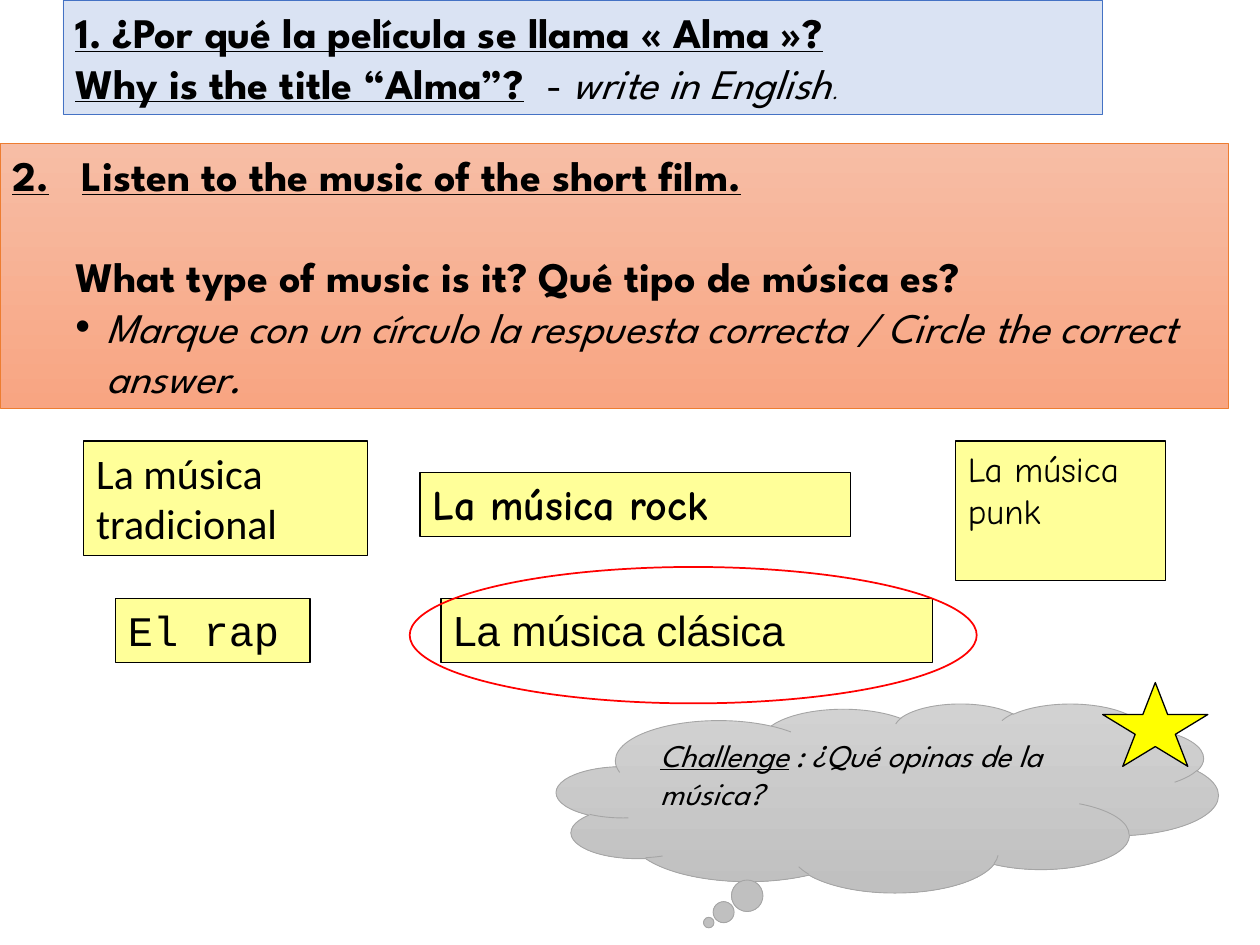
"""Build a Spanish lesson slide about the music of a short film."""
from dataclasses import dataclass

from lxml.etree import SubElement
from pptx import Presentation
from pptx.dml.color import RGBColor
from pptx.enum.shapes import MSO_SHAPE
from pptx.enum.text import MSO_ANCHOR
from pptx.oxml.ns import qn
from pptx.util import Cm, Pt


@dataclass(frozen=True)
class Theme:
    text: str = "000000"
    question: tuple = ("DAE3F3",)
    question_line: str = "4472C4"
    listening: tuple = ("F7BDA5", "F8A582")
    listening_line: str = "ED7D31"
    option: tuple = ("FFFF99",)
    cloud: tuple = ("D2D2D2", "C0C0C0")
    cloud_line: str = "A5A5A5"
    star: tuple = ("FFFF00",)
    answer_line: str = "FF0000"
    main_font: str = "League Spartan"
    large: int = 24
    medium: int = 20
    small: int = 18
    tiny: int = 12


THEME = Theme()


@dataclass(frozen=True)
class TextRun:
    text: str
    bold: bool = False
    italic: bool = False
    underline: bool = False
    size: int = THEME.large
    font: str = THEME.main_font


@dataclass(frozen=True)
class TextLine:
    runs: tuple
    margin: float = 0
    indent: float = 0
    bullet: str = ""
    space_before: float = 0


@dataclass(frozen=True)
class Panel:
    left: float
    top: float
    width: float
    height: float
    fill: tuple = ()
    line: str = THEME.text
    line_width: float = 0.75
    kind: MSO_SHAPE = MSO_SHAPE.RECTANGLE
    lines: tuple = ()
    anchor: MSO_ANCHOR = MSO_ANCHOR.TOP
    bottom_inset: float = 0.13
    adjustments: tuple = ()


def option(left: float, top: float, width: float, height: float, run: TextRun) -> Panel:
    return Panel(left, top, width, height, THEME.option, lines=(TextLine((run,)),))


PANELS = (
    Panel(
        1.27, 0, 20.96, 2.31, THEME.question, THEME.question_line, 0.5,
        anchor=MSO_ANCHOR.MIDDLE,
        lines=(
            TextLine((TextRun("1. ¿Por qué la película se llama « Alma »?", bold=True, underline=True),)),
            TextLine((
                TextRun("Why is the title “Alma”?", bold=True, underline=True),
                TextRun("  ", bold=True),
                TextRun("- "),
                TextRun("write in English", italic=True),
                TextRun(".", italic=True, size=THEME.tiny),
            )),
        ),
    ),
    Panel(
        0, 2.9, 24.77, 5.33, THEME.listening, THEME.listening_line, 0.5,
        anchor=MSO_ANCHOR.MIDDLE,
        lines=(
            TextLine(
                (TextRun("2.\tListen to the music of the short film.", bold=True, underline=True),),
                margin=1.4, indent=-1.4,
            ),
            TextLine(
                (TextRun("What type of music is it? Qué tipo de música es?", bold=True),),
                margin=1.27, space_before=29,
            ),
            TextLine(
                (TextRun("Marque con un círculo la respuesta correcta / Circle the correct answer.", italic=True),),
                margin=1.9, indent=-0.63, bullet="•",
            ),
        ),
    ),
    option(1.69, 8.89, 5.72, 2.31, TextRun("La música tradicional", font="Calibri")),
    option(8.47, 9.53, 8.68, 1.29, TextRun("La música rock", bold=True, font="Comic Neue")),
    option(2.33, 12.07, 3.92, 1.29, TextRun("El rap", font="Courier New")),
    option(8.89, 12.07, 9.91, 1.29, TextRun("La música clásica", font="Arial")),
    option(19.26, 8.89, 4.23, 2.82, TextRun("La música punk", size=THEME.medium, font="Comic Neue")),
    Panel(
        11.22, 14.18, 13.34, 3.81, THEME.cloud, THEME.cloud_line, 0.5,
        MSO_SHAPE.CLOUD_CALLOUT,
        anchor=MSO_ANCHOR.MIDDLE, bottom_inset=0.9, adjustments=(-0.27, 0.66),
        lines=(
            TextLine((
                TextRun("Challenge", italic=True, underline=True, size=THEME.small),
                TextRun(" ", italic=True, size=THEME.small, font="Calibri"),
                TextRun(": ¿Qué opinas de la música?", italic=True, size=THEME.small),
            )),
        ),
    ),
    Panel(22.23, 13.76, 2.12, 1.69, THEME.star, kind=MSO_SHAPE.STAR_5_POINT),
    Panel(8.26, 11.43, 11.43, 2.75, line=THEME.answer_line, line_width=1, kind=MSO_SHAPE.OVAL),
)


def paint(fill, colours: tuple) -> None:
    if not colours:
        fill.background()
    elif len(colours) == 1:
        fill.solid()
        fill.fore_color.rgb = RGBColor.from_string(colours[0])
    else:
        fill.gradient()
        fill.gradient_angle = 270
        for stop, colour in zip(fill.gradient_stops, colours):
            stop.color.rgb = RGBColor.from_string(colour)


def write_line(paragraph, line: TextLine) -> None:
    properties = paragraph._p.get_or_add_pPr()
    properties.set("algn", "l")
    properties.set("marL", str(Cm(line.margin)))
    properties.set("indent", str(Cm(line.indent)))
    if line.space_before:
        paragraph.space_before = Pt(line.space_before)
    if line.bullet:
        SubElement(properties, qn("a:buFont"), typeface="Arial")
        SubElement(properties, qn("a:buChar"), char=line.bullet)
    for item in line.runs:
        run = paragraph.add_run()
        run.text = item.text
        font = run.font
        font.name, font.size = item.font, Pt(item.size)
        font.bold, font.italic, font.underline = item.bold, item.italic, item.underline
        font.color.rgb = RGBColor.from_string(THEME.text)


def draw_panel(slide, panel: Panel) -> None:
    shape = slide.shapes.add_shape(
        panel.kind, Cm(panel.left), Cm(panel.top), Cm(panel.width), Cm(panel.height)
    )
    shape.shadow.inherit = False
    paint(shape.fill, panel.fill)
    shape.line.color.rgb = RGBColor.from_string(panel.line)
    shape.line.width = Pt(panel.line_width)
    for index, value in enumerate(panel.adjustments):
        shape.adjustments[index] = value
    frame = shape.text_frame
    frame.word_wrap = True
    frame.vertical_anchor = panel.anchor
    frame.margin_bottom = Cm(panel.bottom_inset)
    for index, line in enumerate(panel.lines):
        write_line(frame.add_paragraph() if index else frame.paragraphs[0], line)


def main() -> None:
    presentation = Presentation()
    presentation.slide_width, presentation.slide_height = Cm(25.4), Cm(19.05)
    slide = presentation.slides.add_slide(presentation.slide_layouts[6])
    for panel in PANELS:
        draw_panel(slide, panel)
    presentation.save("out.pptx")


if __name__ == "__main__":
    main()
